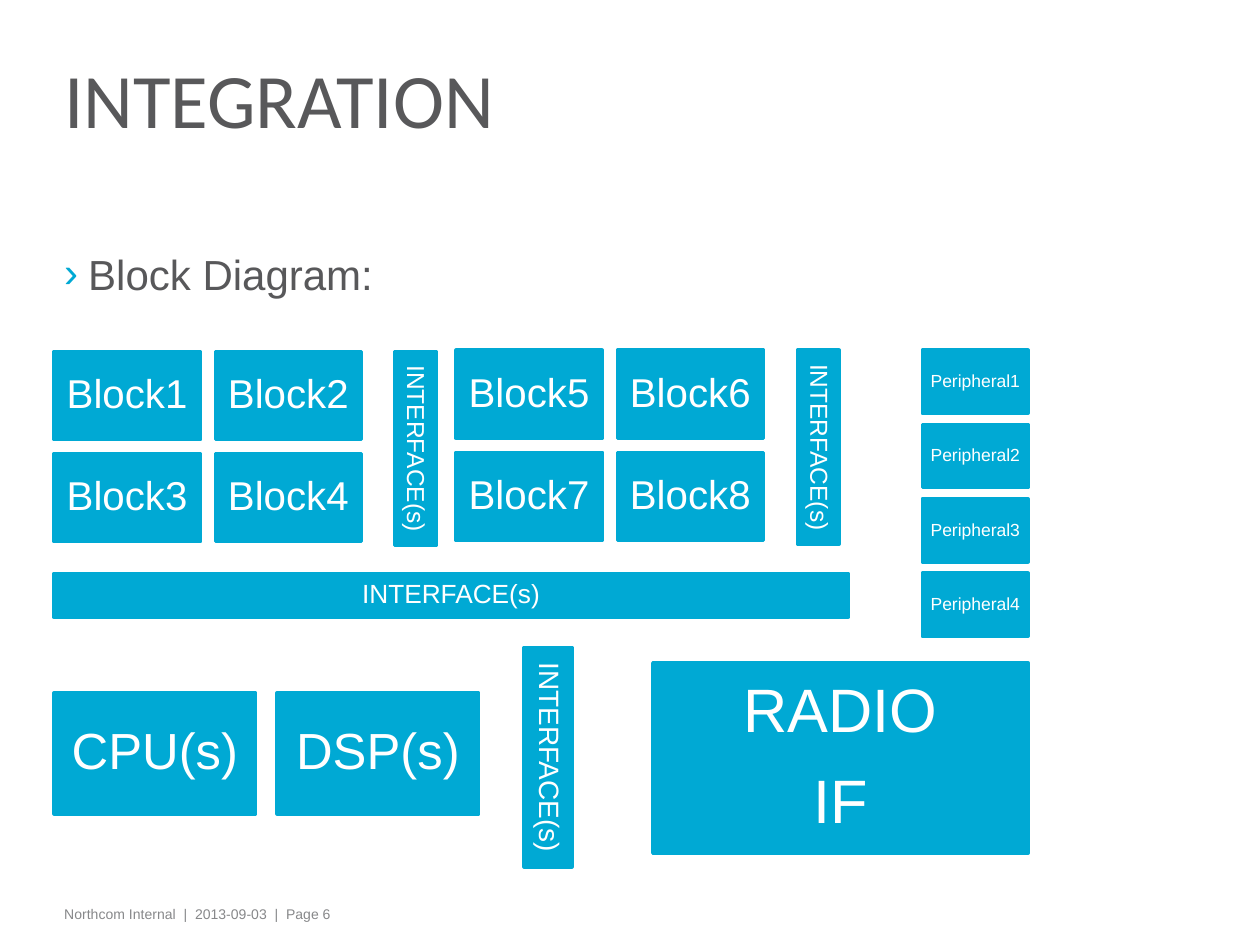
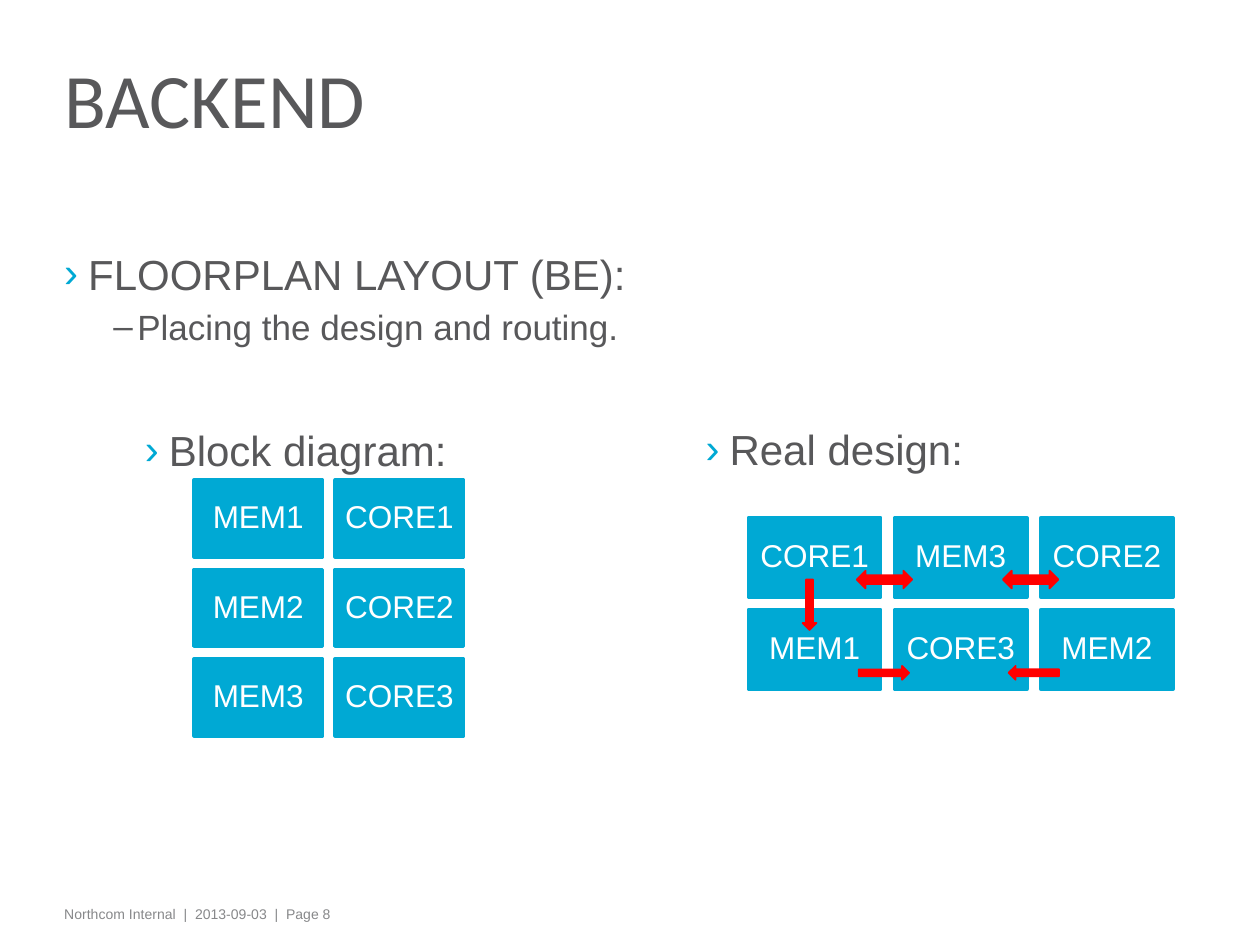
from lxml import etree
from pptx import Presentation
from pptx.dml.color import RGBColor
from pptx.enum.shapes import MSO_SHAPE
from pptx.enum.text import MSO_ANCHOR, MSO_AUTO_SIZE, PP_ALIGN
from pptx.oxml.ns import qn
from pptx.util import Inches, Pt

CYAN = RGBColor(0x00, 0xA9, 0xD4)
DARK_GREY = RGBColor(0x58, 0x58, 0x5A)
FOOTER_GREY = RGBColor(0x87, 0x88, 0x8A)
WHITE = RGBColor(0xFF, 0xFF, 0xFF)
RED = RGBColor(0xFF, 0x00, 0x00)

LEFT, CENTER = PP_ALIGN.LEFT, PP_ALIGN.CENTER
TOP, MIDDLE = MSO_ANCHOR.TOP, MSO_ANCHOR.MIDDLE
NO_AUTOFIT = MSO_AUTO_SIZE.NONE
RECTANGLE = MSO_SHAPE.RECTANGLE
DOWN_ARROW = MSO_SHAPE.DOWN_ARROW
DOUBLE_ARROW = MSO_SHAPE.LEFT_RIGHT_ARROW


def write(frame, text, size=24, color=DARK_GREY, font="Arial", align=LEFT,
          anchor=TOP, margins=(0.08, 0), bullet=None, bullet_color=CYAN,
          indent=0.19, level=0, line_spacing=1.0, gap=0, append=False):
    """Fill a text frame; each line of the text becomes a paragraph."""
    frame.auto_size = NO_AUTOFIT
    frame.word_wrap = True
    frame.vertical_anchor = anchor
    frame.margin_left = frame.margin_right = Inches(margins[0])
    frame.margin_top = frame.margin_bottom = Inches(margins[1])
    for number, line in enumerate(text.split("\n")):
        is_first = number == 0 and not append
        paragraph = frame.paragraphs[0] if is_first else frame.add_paragraph()
        paragraph.level = level
        if bullet:
            properties = paragraph._p.get_or_add_pPr()
            properties.set("marL", str(Inches(indent)))
            properties.set("indent", str(Inches(-0.19)))
            fill = etree.SubElement(properties, qn("a:buClr"))
            etree.SubElement(fill, qn("a:srgbClr"), val=str(bullet_color))
            etree.SubElement(properties, qn("a:buFont"), typeface="Arial")
            etree.SubElement(properties, qn("a:buChar"), char=bullet)
        paragraph.alignment = align
        paragraph.line_spacing = line_spacing
        paragraph.space_before = Pt(0 if is_first else gap)
        run = paragraph.add_run()
        run.text = line
        run.font.size = Pt(size)
        run.font.name = font
        run.font.color.rgb = color


def add_figure(slide, kind, left, top, width, height, color=CYAN, line=2,
               text=None, size=18, vertical=False):
    """Add a block or arrow in one colour, with a centred label if given."""
    figure = slide.shapes.add_shape(kind, Inches(left), Inches(top),
                                    Inches(width), Inches(height))
    figure.shadow.inherit = False
    figure.fill.solid()
    figure.fill.fore_color.rgb = color
    figure.line.color.rgb = color
    figure.line.width = Pt(line)
    if text:
        write(figure.text_frame, text, size=size, color=WHITE, align=CENTER,
              anchor=MIDDLE, margins=(0.04, 0.04), line_spacing=0.9, gap=14)
    if vertical:
        figure.text_frame._txBody.bodyPr.set("vert", "vert")
    return figure


prs = Presentation()
prs.slide_width, prs.slide_height = Inches(10), Inches(7.5)

# Title, first list item and footer of each slide
slides = []
for title, topic, body_height, page in [
        ("INTEGRATION", "Block Diagram:", 4.21, 6),
        ("BACKEND", "FLOORPLAN LAYOUT (BE):", 1.2, 8)]:
    slide = prs.slides.add_slide(prs.slide_layouts[1])
    heading, body = slide.placeholders
    heading.left, heading.top = Inches(0.43), Inches(0.26)
    heading.width, heading.height = Inches(8.2), Inches(1.19)
    write(heading.text_frame, title, size=44, font="Calibri", anchor=MIDDLE,
          line_spacing=0.75)
    body.left, body.top = Inches(0.43), Inches(1.97)
    body.width, body.height = Inches(9.13), Inches(body_height)
    write(body.text_frame, topic, bullet="›")
    footer = slide.shapes.add_textbox(Inches(0.43), Inches(7.14),
                                      Inches(8.09), Inches(0.24))
    write(footer.text_frame, f"Northcom Internal  |  2013-09-03  |  Page {page}",
          size=8, color=FOOTER_GREY, margins=(0.08, 0.05))
    slides.append(slide)
integration, backend = slides

# Integration: two groups of four blocks
for first, group_left, group_top in [(1, 0.43, 2.79), (5, 3.62, 2.78)]:
    for i in range(4):
        row, column = divmod(i, 2)
        add_figure(integration, RECTANGLE, group_left + 1.28 * column,
                   group_top + 0.81 * row, 1.16, 0.7,
                   text=f"Block{first + i}", size=23)

# Integration: interfaces between the groups
add_figure(integration, RECTANGLE, 0.43, 4.55, 6.3, 0.35,
           text="INTERFACE(s)", size=15)
for left, top, width, height, size in [(4.16, 5.14, 0.38, 1.74, 16),
                                       (3.13, 2.79, 0.33, 1.54, 14),
                                       (6.33, 2.78, 0.33, 1.54, 14)]:
    add_figure(integration, RECTANGLE, left, top, width, height,
               text="INTERFACE(s)", size=size, vertical=True)

# Integration: processors, peripherals and radio
for i, processor in enumerate(["CPU(s)", "DSP(s)"]):
    add_figure(integration, RECTANGLE, 0.43 + 1.77 * i, 5.5, 1.6, 0.96,
               text=processor, size=29)
for i in range(4):
    add_figure(integration, RECTANGLE, 7.32, 2.78 + 0.59 * i, 0.84, 0.5,
               text=f"Peripheral{i + 1}", size=10)
add_figure(integration, RECTANGLE, 5.18, 5.26, 2.98, 1.51,
           text="RADIO\nIF", size=35)

# Backend: second list item and the two diagram captions
write(backend.placeholders[1].text_frame, "Placing the design and routing.",
      size=20, bullet="–", bullet_color=DARK_GREY, indent=0.58, level=1,
      gap=4, append=True)
for caption, left, top in [("Block diagram:", 1.07, 3.37),
                           ("Real design:", 5.52, 3.36)]:
    caption_box = backend.shapes.add_textbox(Inches(left), Inches(top),
                                             Inches(3.37), Inches(0.45))
    write(caption_box.text_frame, caption, bullet="›")

# Backend: block diagram and real design as grids
block_diagram = [["MEM1", "CORE1"], ["MEM2", "CORE2"], ["MEM3", "CORE3"]]
real_design = [["CORE1", "MEM3", "CORE2"], ["MEM1", "CORE3", "MEM2"]]
for grid, left, top, width, height, step_x, step_y in [
        (block_diagram, 1.54, 3.81, 1.02, 0.61, 1.12, 0.71),
        (real_design, 5.94, 4.11, 1.05, 0.63, 1.16, 0.73)]:
    for row, units in enumerate(grid):
        for column, unit in enumerate(units):
            add_figure(backend, RECTANGLE, left + step_x * column,
                       top + step_y * row, width, height, text=unit)

# Backend: routing arrows
for left, top, rotation in [(6.37, 4.6, 0), (6.96, 5.14, 270), (8.15, 5.14, 90)]:
    route = add_figure(backend, DOWN_ARROW, left, top, 0.11, 0.4, RED, 1)
    route.rotation = rotation
for left in (7.96, 6.8):
    add_figure(backend, DOUBLE_ARROW, left, 4.53, 0.44, 0.14, RED, 1)

prs.save("out.pptx")
